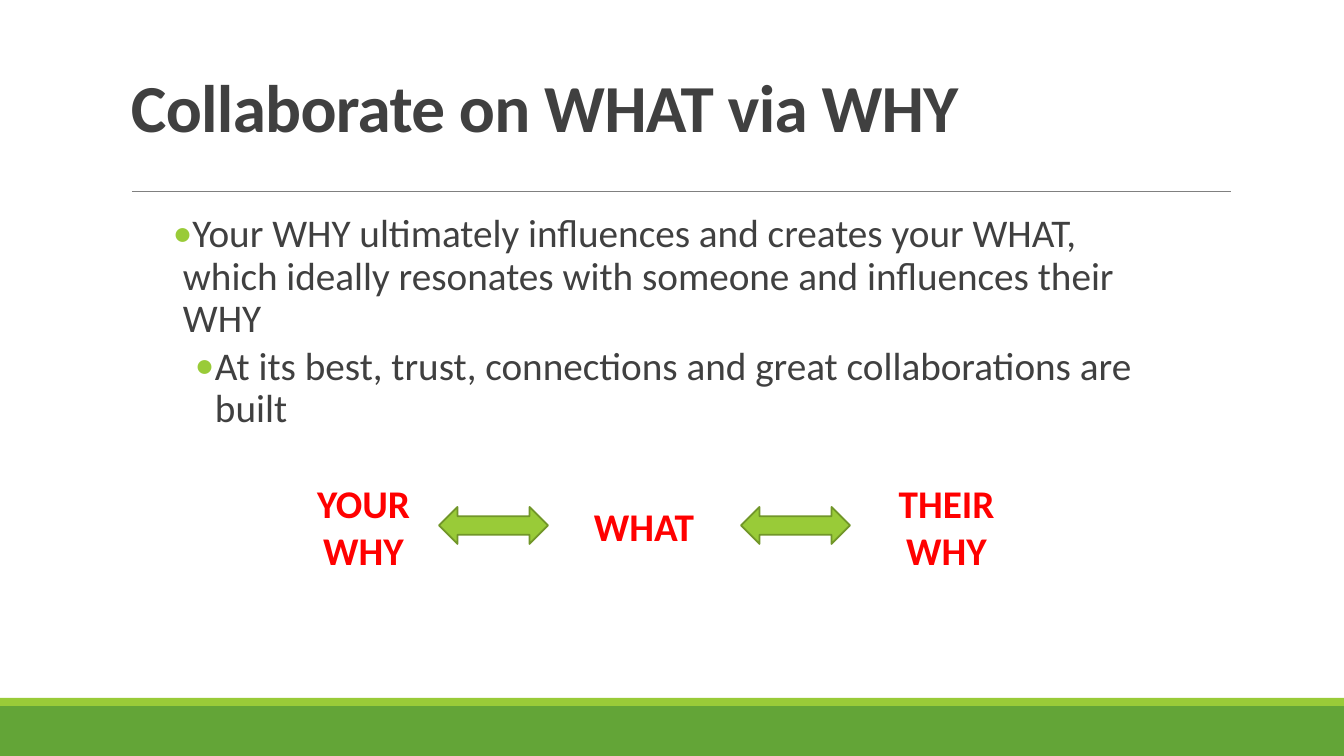
from dataclasses import dataclass

from lxml import etree
from pptx import Presentation
from pptx.dml.color import RGBColor
from pptx.enum.shapes import MSO_CONNECTOR as Connector, MSO_SHAPE as Shape
from pptx.enum.text import MSO_ANCHOR as Anchor, PP_ALIGN as Align
from pptx.oxml.ns import qn
from pptx.util import Pt

TITLE = "Collaborate on WHAT via WHY"
# text, level, left margin px, hanging px, space before pt, space after pt
BULLETS = [
    ("Your WHY ultimately influences and creates your WHAT, "
     "which ideally resonates with someone and influences their WHY", 0, 10, 10, 12, 2),
    ("At its best, trust, connections and great collaborations are built", 1, 42, 20, 2, 4),
]
# text, alignment, left, top, width, height in px
LABELS = [
    ("YOUR WHY", Align.CENTER, 288, 474, 151, 105),
    ("WHAT", Align.LEFT, 584, 497, 145, 57),
    ("THEIR WHY", Align.CENTER, 871, 474, 151, 105),
]
ARROW_LEFTS = [439, 741]
ARROW_TOP, ARROW_WIDTH, ARROW_HEIGHT = 507, 109, 37
WIDTH, HEIGHT = 1344, 756
FOOTER_TOP, STRIPE_HEIGHT = 706, 8


@dataclass(frozen=True)
class Theme:
    font: str = "Calibri"
    ink: str = "404040"
    rule: str = "808080"
    accent: str = "99CB38"
    accent_edge: str = "719629"
    footer: str = "63A537"
    label: str = "FF0000"
    title_size: int = 48
    text_size: int = 28


THEME = Theme()


def px(*lengths):
    """Turn px into EMU, at 100.8 px to the inch."""
    return [round(length * 914400 / 100.8) for length in lengths]


def color(code):
    return RGBColor.from_string(code)


def style(para, size, ink, bold=False):
    para.font.name = THEME.font
    para.font.size = Pt(size)
    para.font.color.rgb = color(ink)
    para.font.bold = bold


def add_text(page, *bounds):
    frame = page.shapes.add_textbox(*px(*bounds)).text_frame
    frame.word_wrap = True
    return frame


def add_solid(page, kind, bounds, fill, edge=None):
    shape = page.shapes.add_shape(kind, *px(*bounds))
    shape.shadow.inherit = False
    shape.fill.solid()
    shape.fill.fore_color.rgb = color(fill)
    if edge:
        shape.line.color.rgb = color(edge)
        shape.line.width = Pt(1.25)
    else:
        shape.line.fill.background()


def add_bullet(para, margin, hanging):
    props = para._p.get_or_add_pPr()
    left, indent = px(margin, -hanging)
    props.set("marL", str(left))
    props.set("indent", str(indent))
    tint = etree.SubElement(props, qn("a:buClr"))
    etree.SubElement(tint, qn("a:srgbClr"), val=THEME.accent)
    etree.SubElement(props, qn("a:buFont"), typeface=THEME.font)
    etree.SubElement(props, qn("a:buChar"), char="•")


def add_frame(page):
    """Draw the footer bars and the rule under the title."""
    add_solid(page, Shape.RECTANGLE, (0, FOOTER_TOP, WIDTH, HEIGHT - FOOTER_TOP), THEME.footer)
    add_solid(page, Shape.RECTANGLE,
              (0, FOOTER_TOP - STRIPE_HEIGHT, WIDTH, STRIPE_HEIGHT), THEME.accent)
    rule = page.shapes.add_connector(Connector.STRAIGHT, *px(132, 191, 1231, 191))
    rule.line.color.rgb = color(THEME.rule)
    rule.line.width = Pt(0.5)
    etree.SubElement(rule._element.spPr, qn("a:effectLst"))


def add_title(page):
    frame = add_text(page, 121, 31, 1109, 120)
    frame.vertical_anchor = Anchor.BOTTOM
    para = frame.paragraphs[0]
    span = para.add_run()
    span.text = TITLE
    span.font._element.set("spc", "-50")
    para.line_spacing = 0.85
    style(para, THEME.title_size, THEME.ink, bold=True)


def add_body(page):
    frame = add_text(page, 173, 209, 979, 427)
    frame.margin_left = frame.margin_right = 0
    for index, (text, level, margin, hanging, before, after) in enumerate(BULLETS):
        para = frame.add_paragraph() if index else frame.paragraphs[0]
        para.text = text
        para.level = level
        para.line_spacing = 0.9
        para.space_before, para.space_after = Pt(before), Pt(after)
        add_bullet(para, margin, hanging)
        style(para, THEME.text_size, THEME.ink)


def add_exchange(page):
    """Draw the three labels and the arrows between them."""
    for text, align, *bounds in LABELS:
        para = add_text(page, *bounds).paragraphs[0]
        para.text = text
        para.alignment = align
        style(para, THEME.text_size, THEME.label, bold=True)
    for left in ARROW_LEFTS:
        add_solid(page, Shape.LEFT_RIGHT_ARROW, (left, ARROW_TOP, ARROW_WIDTH, ARROW_HEIGHT),
                  THEME.accent, THEME.accent_edge)


def main():
    deck = Presentation()
    deck.slide_width, deck.slide_height = px(WIDTH, HEIGHT)
    page = deck.slides.add_slide(deck.slide_layouts[6])
    add_frame(page)
    add_title(page)
    add_body(page)
    add_exchange(page)
    deck.save("out.pptx")


if __name__ == "__main__":
    main()
